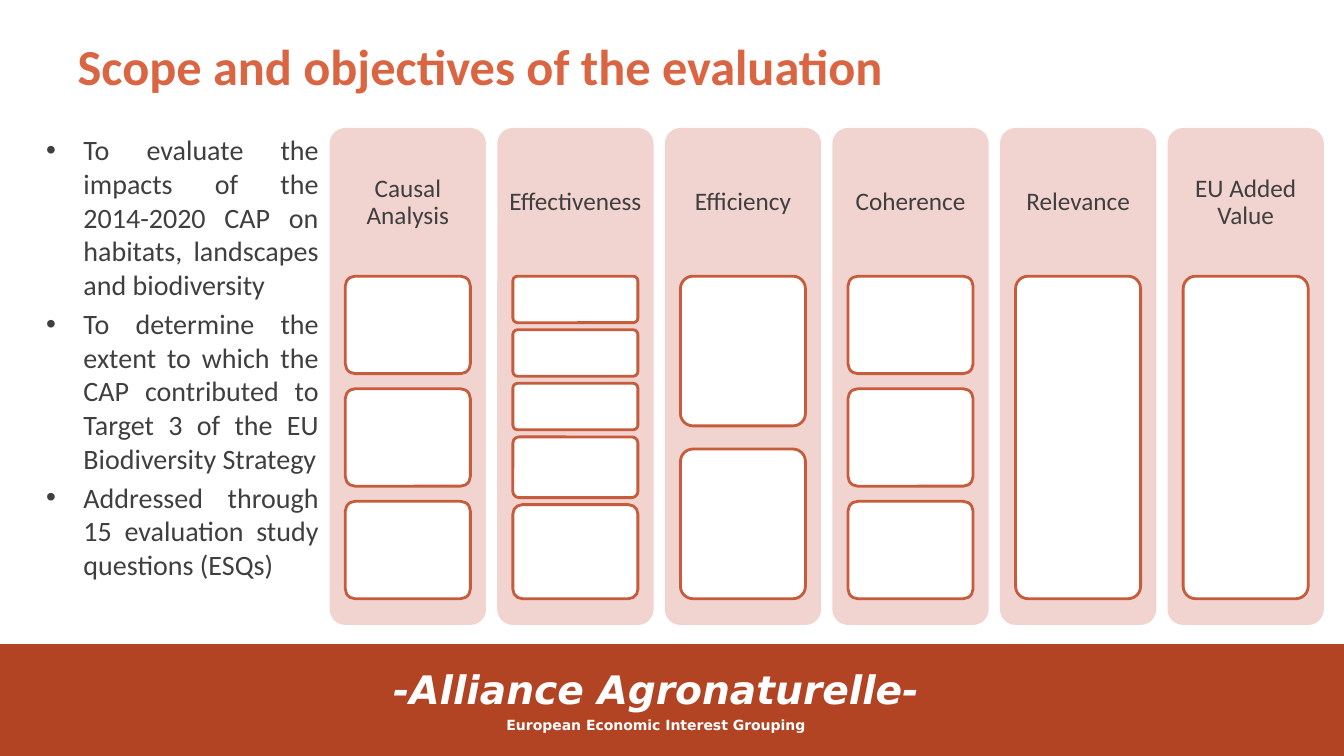
from pptx import Presentation
from pptx.util import Inches, Pt
from pptx.dml.color import RGBColor
from pptx.enum.shapes import MSO_SHAPE
from pptx.enum.text import MSO_ANCHOR, PP_ALIGN
from lxml.etree import SubElement
from pptx.oxml.ns import qn

TITLE = "Scope and objectives of the evaluation"
GOALS = [
    "To evaluate the impacts of the 2014-2020 CAP on habitats, landscapes and biodiversity",
    "To determine the extent to which the CAP contributed to Target 3 of the EU Biodiversity Strategy",
    "Addressed through 15 evaluation study questions (ESQs)",
]
# Heading, gap between boxes, relative box heights
THEMES = [
    ("Causal Analysis", 0.15, [1, 1, 1]),
    ("Effectiveness", 0.07, [0.46, 0.46, 0.46, 0.6, 0.93]),
    ("Efficiency", 0.23, [1, 1]),
    ("Coherence", 0.15, [1, 1, 1]),
    ("Relevance", 0, [1]),
    ("EU Added Value", 0, [1]),
]
# Text, size, italic
FOOTER = [
    ("-Alliance Agronaturelle-", 28, True),
    ("European Economic Interest Grouping", 10, False),
]
COLORS = {"band": "B24423", "title": "DA6542", "text": "3F3F3F",
          "panel": "F1D3CF", "edge": "C65C3C", "white": "FFFFFF"}

WIDTH, HEIGHT = 13.33, 7.5
TOP, TALL = 1.27, 4.93             # panels and goals
FIRST, LAST, WIDE = 3.27, 11.58, 1.55
STEP = (LAST - FIRST) / (len(THEMES) - 1)
HEAD = 1.48                        # heading height
BOX_TOP, BOX_WIDE, STACK = 2.74, 1.24, 3.2


def color(name):
    return RGBColor.from_string(COLORS[name])


def add_box(kind, x, y, w, h, fill, edge=None):
    box = slide.shapes.add_shape(kind, Inches(x), Inches(y), Inches(w), Inches(h))
    box.shadow.inherit = False
    box.fill.solid()
    box.fill.fore_color.rgb = color(fill)
    if edge:
        box.line.color.rgb = color(edge)
        box.line.width = Pt(2)
    else:
        box.line.fill.background()
    if kind == MSO_SHAPE.ROUNDED_RECTANGLE:
        box.adjustments[0] = 0.1
    return box


def add_text(x, y, w, h):
    frame = slide.shapes.add_textbox(Inches(x), Inches(y), Inches(w), Inches(h)).text_frame
    frame.word_wrap = True
    return frame


def add_line(frame, i, text, size, tint, align, face="Calibri"):
    line = frame.add_paragraph() if i else frame.paragraphs[0]
    line.text = text
    line.alignment = align
    line.font.name = face
    line.font.size = Pt(size)
    line.font.color.rgb = color(tint)
    return line


deck = Presentation()
deck.slide_width, deck.slide_height = Inches(WIDTH), Inches(HEIGHT)
slide = deck.slides.add_slide(deck.slide_layouts[5])

# Footer band
add_box(MSO_SHAPE.RECTANGLE, 0, 6.39, WIDTH, 1.11, "band")
frame = add_text(-0.16, 6.55, WIDTH, 0.79)
for i, (text, size, slant) in enumerate(FOOTER):
    line = add_line(frame, i, text, size, "white", PP_ALIGN.CENTER, "DejaVu Sans")
    line.space_before = Pt(3)
    line.font.bold = True
    line.font.italic = slant

# Title
title = slide.shapes.title
title.left, title.top = Inches(0.67), Inches(0.3)
title.width, title.height = Inches(12), Inches(1.25)
title.text_frame.vertical_anchor = MSO_ANCHOR.TOP
line = add_line(title.text_frame, 0, TITLE, 36, "title", PP_ALIGN.LEFT)
line.font.bold = True

# Goals
frame = add_text(0.36, TOP, 2.9, TALL)
for i, goal in enumerate(GOALS):
    line = add_line(frame, i, goal, 20, "text", PP_ALIGN.JUSTIFY)
    line.space_before = Pt(4)
    props = line._p.get_or_add_pPr()
    props.set("marL", str(Inches(0.37)))
    props.set("indent", str(-Inches(0.37)))
    SubElement(props, qn("a:buFont")).set("typeface", "Arial")
    SubElement(props, qn("a:buChar")).set("char", "•")
    # Bullets come before default run properties
    props.append(props.find(qn("a:defRPr")))

# Theme panels
for col, (name, gap, parts) in enumerate(THEMES):
    x = FIRST + col * STEP
    add_box(MSO_SHAPE.ROUNDED_RECTANGLE, x, TOP, WIDE, TALL, "panel")
    frame = add_text(x, TOP, WIDE, HEAD)
    frame.vertical_anchor = MSO_ANCHOR.MIDDLE
    frame.margin_left = frame.margin_right = Inches(0.07)
    frame.margin_top = frame.margin_bottom = Inches(0.07)
    line = add_line(frame, 0, name, 18, "text", PP_ALIGN.CENTER)
    line.line_spacing = 0.9

    unit = (STACK - gap * (len(parts) - 1)) / sum(parts)
    y = BOX_TOP
    for part in parts:
        add_box(MSO_SHAPE.ROUNDED_RECTANGLE, x + (WIDE - BOX_WIDE) / 2, y,
                BOX_WIDE, part * unit, "white", "edge")
        y += part * unit + gap

deck.save("out.pptx")
